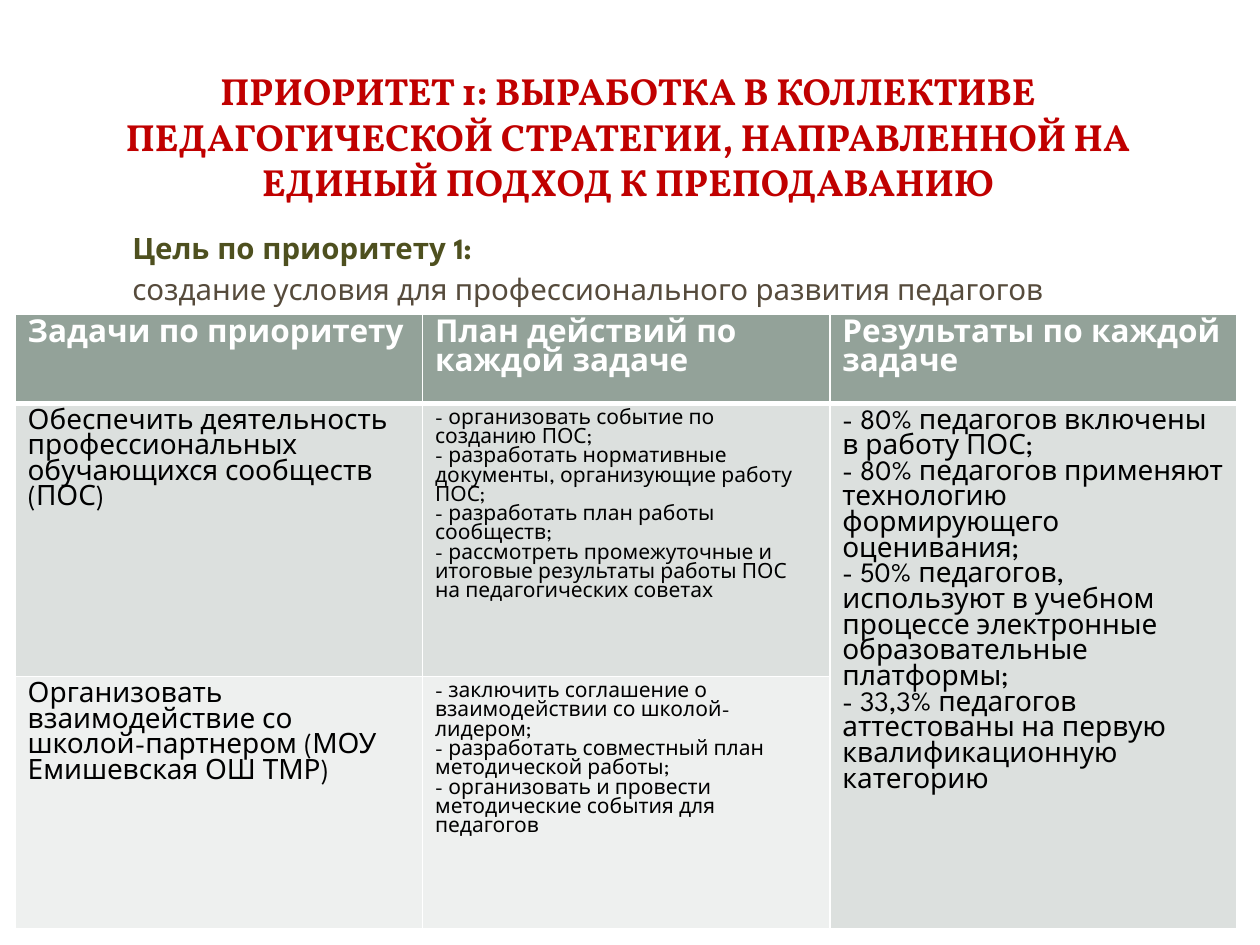
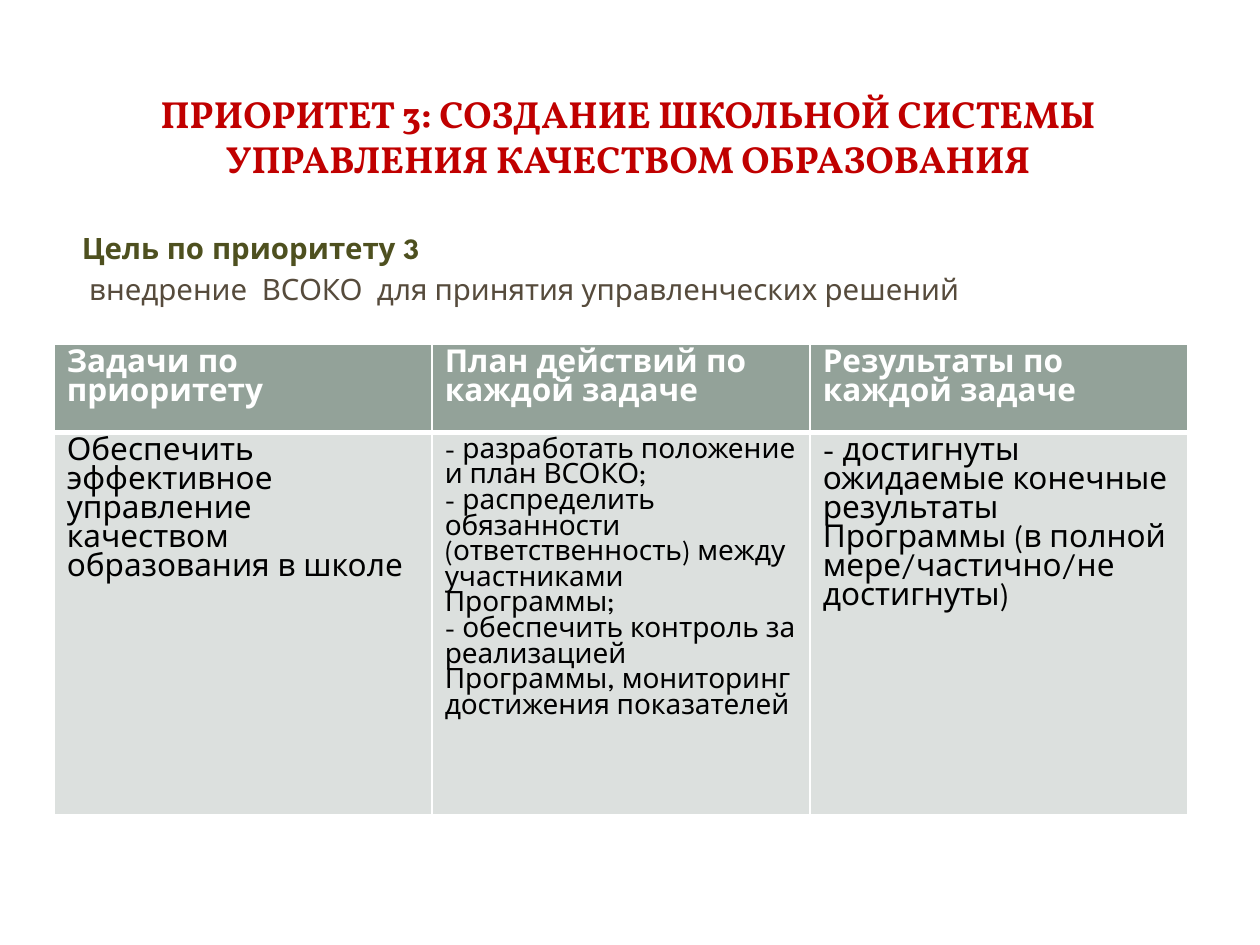
from lxml.etree import SubElement
from pptx import Presentation
from pptx.dml.color import RGBColor
from pptx.enum.shapes import MSO_SHAPE
from pptx.enum.text import MSO_ANCHOR, PP_ALIGN
from pptx.oxml.ns import qn
from pptx.util import Inches, Pt

WHITE = RGBColor(0xFF, 0xFF, 0xFF)
BLACK = RGBColor(0, 0, 0)
RED = RGBColor(0xC0, 0, 0)
OLIVE = RGBColor(0x4E, 0x50, 0x1F)
BROWN = RGBColor(0x56, 0x4B, 0x3C)
HEADER_GREEN = RGBColor(0x93, 0xA2, 0x99)
BAND_FILLS = [RGBColor(0xDC, 0xE0, 0xDE), RGBColor(0xEE, 0xF0, 0xEF)]

TITLE_FONT = "Vollkorn"
BODY_FONT = "League Spartan"
HEADERS = [
    "Задачи по приоритету",
    "План действий по каждой задаче",
    "Результаты по каждой задаче",
]


def style_runs(para, font, size, color, bold=False):
    for span in para.runs:
        span.font.name = font
        span.font.size = Pt(size)
        span.font.color.rgb = color
        span.font.bold = bold


def add_panel(page, kind, left, top, width, height):
    panel = page.shapes.add_shape(
        kind, Inches(left), Inches(top), Inches(width), Inches(height))
    panel.shadow.inherit = False
    panel.fill.solid()
    panel.fill.fore_color.rgb = WHITE
    panel.line.fill.background()
    return panel


def add_page(deck):
    """Add a slide with the shared sheet and title bands."""
    page = deck.slides.add_slide(deck.slide_layouts[6])
    sheet = add_panel(page, MSO_SHAPE.ROUNDED_RECTANGLE, 0.1, 0.11, 9.8, 7.29)
    sheet.adjustments[0] = 0.017
    band = add_panel(page, MSO_SHAPE.RECTANGLE, 0.3, 0.3, 9.4, 1.45)
    band_color = band.fill._xPr.find(qn("a:solidFill"))[0]
    SubElement(band_color, qn("a:alpha"), val="83000")
    add_panel(page, MSO_SHAPE.RECTANGLE, 0.41, 0.41, 9.17, 1.22)
    return page


def add_text_box(page, left, top, width, height):
    box = page.shapes.add_textbox(Inches(left), Inches(top), Inches(width), Inches(height))
    box.text_frame.word_wrap = True
    return box.text_frame


def add_title(page, text):
    frame = add_text_box(page, 0.47, 0.45, 9.03, 1.26)
    frame.vertical_anchor = MSO_ANCHOR.MIDDLE
    frame.text = text
    para = frame.paragraphs[0]
    para.alignment = PP_ALIGN.CENTER
    style_runs(para, TITLE_FONT, 21.6, RED, bold=True)


def add_goal(page, left, width, heading, goal):
    frame = add_text_box(page, left, 1.78, width, 0.63)
    frame.margin_left = Inches(0.22)
    frame.text = f"{heading}\n{goal}"
    first, second = frame.paragraphs
    first.space_before = Pt(5.5)
    second.space_before = Pt(3.2)
    style_runs(first, BODY_FONT, 16.8, OLIVE, bold=True)
    style_runs(second, BODY_FONT, 16.8, BROWN)


def set_borders(cell, bottom):
    """Draw white lines round the cell; the fill must be set afterwards."""
    properties = cell._tc.get_or_add_tcPr()
    for side, width in (("L", 1), ("R", 1), ("T", 1), ("B", bottom)):
        line = SubElement(properties, qn(f"a:ln{side}"), w=str(Pt(width)))
        fill = SubElement(line, qn("a:solidFill"))
        SubElement(fill, qn("a:srgbClr"), val=str(WHITE))


def fill_cell(cell, text, size, color, fill, bold=False, bottom=1):
    cell.text = text
    for para in cell.text_frame.paragraphs:
        style_runs(para, BODY_FONT, size, color, bold)
    set_borders(cell, bottom)
    cell.fill.solid()
    cell.fill.fore_color.rgb = fill


def add_plan_table(page, left, top, width, height, row_heights, tasks, sizes):
    """Each task is a row of texts, None where the cell above continues."""
    frame = page.shapes.add_table(
        len(row_heights), len(HEADERS), Inches(left), Inches(top),
        Inches(width), Inches(height))
    table = frame.table
    table.horz_banding = False
    for column in table.columns:
        column.width = Inches(width / len(HEADERS))
    for row, row_height in zip(table.rows, row_heights):
        row.height = Inches(row_height)
    frame.height = Inches(height)

    for index, text in enumerate(HEADERS):
        fill_cell(table.cell(0, index), text, 18, WHITE, HEADER_GREEN, bold=True, bottom=3)
    for row_index, task in enumerate(tasks, 1):
        fill = BAND_FILLS[(row_index - 1) % 2]
        for index, (text, size) in enumerate(zip(task, sizes)):
            cell = table.cell(row_index, index)
            if text is None:
                table.cell(row_index - 1, index).merge(cell)
            else:
                fill_cell(cell, text, size, BLACK, fill)


def add_priority_one(deck):
    page = add_page(deck)
    add_title(page, "ПРИОРИТЕТ 1: ВЫРАБОТКА В КОЛЛЕКТИВЕ ПЕДАГОГИЧЕСКОЙ СТРАТЕГИИ, "
                    "НАПРАВЛЕННОЙ НА ЕДИНЫЙ ПОДХОД К ПРЕПОДАВАНИЮ")
    tasks = [
        [
            "Обеспечить деятельность профессиональных обучающихся сообществ (ПОС)",
            "- организовать событие по созданию ПОС;\n"
            "- разработать нормативные документы, организующие работу ПОС;\n"
            "- разработать план работы сообществ;\n"
            "- рассмотреть промежуточные и итоговые результаты работы ПОС "
            "на педагогических советах",
            "- 80% педагогов включены в работу ПОС;\n"
            "- 80% педагогов применяют технологию формирующего оценивания;\n"
            "- 50% педагогов, используют в учебном процессе электронные "
            "образовательные платформы;\n"
            "- 33,3% педагогов аттестованы на первую квалификационную категорию",
        ],
        [
            "Организовать взаимодействие со школой-партнером (МОУ Емишевская ОШ ТМР)",
            "- заключить соглашение о взаимодействии со школой-лидером;\n"
            "- разработать совместный план методической работы;\n"
            "- организовать и провести методические события для педагогов",
            None,
        ],
    ]
    add_plan_table(page, 0.12, 2.49, 9.7, 4.88, [0.71, 2.17, 2], tasks, sizes=[16, 12, 16])
    add_goal(page, 0.83, 9, "Цель по приоритету 1:",
             "создание условия для профессионального развития педагогов")


def add_priority_three(deck):
    page = add_page(deck)
    add_title(page, "ПРИОРИТЕТ 3: СОЗДАНИЕ ШКОЛЬНОЙ СИСТЕМЫ "
                    "УПРАВЛЕНИЯ КАЧЕСТВОМ ОБРАЗОВАНИЯ")
    tasks = [[
        "Обеспечить эффективное управление качеством образования в школе",
        "- разработать положение и план ВСОКО;\n"
        "- распределить обязанности (ответственность) между участниками Программы;\n"
        "- обеспечить контроль за реализацией Программы, мониторинг "
        "достижения показателей",
        "- достигнуты ожидаемые конечные результаты Программы "
        "(в полной мере/частично/не достигнуты)",
    ]]
    add_plan_table(page, 0.43, 2.73, 9, 4.27, [0.41, 0.41], tasks, sizes=[18, 16, 18])
    add_goal(page, 0.43, 9.3, "Цель по приоритету 3",
             " внедрение  ВСОКО  для принятия управленческих решений")


def main():
    deck = Presentation()
    deck.slide_width = Inches(10)
    deck.slide_height = Inches(7.5)
    add_priority_one(deck)
    add_priority_three(deck)
    deck.save("out.pptx")


if __name__ == "__main__":
    main()
